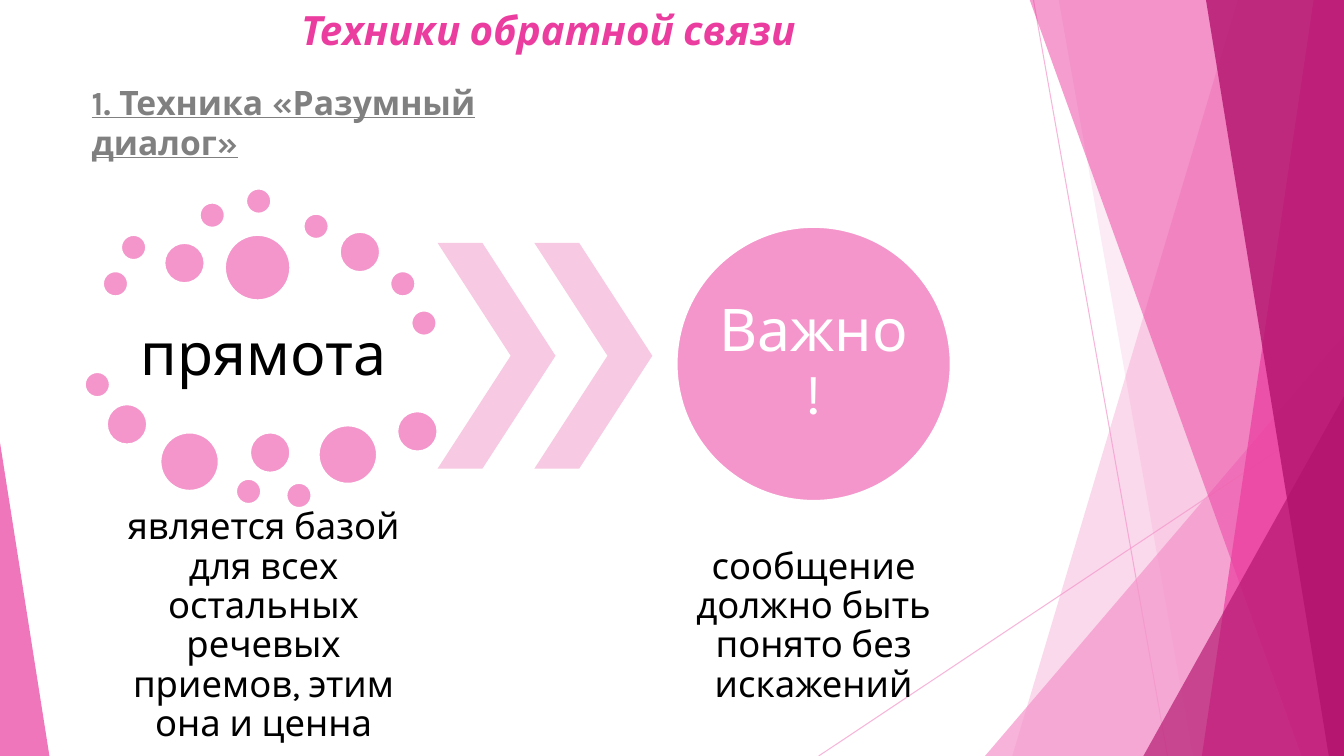
from dataclasses import dataclass, field
from typing import Any

from lxml.etree import SubElement
from pptx import Presentation
from pptx.dml.color import RGBColor
from pptx.enum.shapes import MSO_CONNECTOR as Connector, MSO_SHAPE as Preset
from pptx.enum.text import MSO_ANCHOR as Anchor, PP_ALIGN as Align
from pptx.oxml.ns import qn
from pptx.util import Pt

PX = 9144  # EMU in one px, 100 px to the inch
WIDTH, HEIGHT = 1333, 750


@dataclass(frozen=True)
class Theme:
    font: str = "Karla"
    pink: str = "F496CB"
    magenta: str = "EB3D9F"
    plum: str = "B2136D"
    pale: str = "F8C9E2"
    white: str = "FFFFFF"
    black: str = "000000"
    gray: str = "808080"
    title_size: float = 28.8
    heading_size: float = 24
    label_size: float = 42
    note_size: float = 26
    outline: float = 1.5
    hairline: float = 0.75


THEME = Theme()


@dataclass(frozen=True)
class Box:
    left: int
    top: int
    width: int
    height: int

    def emu(self) -> tuple[int, ...]:
        return tuple(n * PX for n in (self.left, self.top, self.width, self.height))


@dataclass(frozen=True)
class Blade:
    """A band from a slanted left edge to the right side of the page."""
    top_left: int
    bottom_left: int
    color: str
    opacity: int


@dataclass(frozen=True)
class Corner:
    """A right triangle whose peak is at the given share of its width."""
    box: Box
    peak: int
    color: str
    opacity: int


@dataclass(frozen=True)
class Ray:
    start: tuple[int, int]
    end: tuple[int, int]


@dataclass(frozen=True)
class Dot:
    left: int
    top: int
    size: int


@dataclass(frozen=True)
class Label:
    text: str
    size: float
    color: str
    inset: int = 0
    align: Any = Align.CENTER
    anchor: Any = Anchor.MIDDLE
    spacing: float = 0.9
    style: dict[str, bool] = field(default_factory=dict)


RAYS = [Ray((1025, 0), (1158, 750)), Ray((1333, 403), (812, 750))]
FACETS = [
    Blade(1228, 1004, THEME.pink, 36),
    Blade(1050, 1183, THEME.pink, 20),
    Corner(Box(977, 333, 356, 417), 1, THEME.pink, 72),
    Blade(1021, 1291, THEME.magenta, 50),
    Blade(1303, 1192, THEME.magenta, 70),
    Blade(1196, 1318, THEME.plum, 80),
    Corner(Box(1134, 393, 199, 357), 1, THEME.plum, 66),
    Corner(Box(0, 439, 49, 311), 0, THEME.magenta, 70),
]
SMALL, MEDIUM, LARGE, LARGEST = 25, 40, 58, 65
DOTS = [
    # Arc above the word
    Dot(102, 269, SMALL), Dot(120, 233, SMALL), Dot(163, 241, MEDIUM),
    Dot(198, 201, SMALL), Dot(244, 187, SMALL), Dot(301, 212, SMALL),
    Dot(337, 230, MEDIUM), Dot(387, 269, SMALL), Dot(408, 308, SMALL),
    Dot(223, 233, LARGEST),
    # Arc below the word
    Dot(84, 369, SMALL), Dot(106, 401, MEDIUM), Dot(159, 429, LARGE),
    Dot(234, 475, SMALL), Dot(248, 429, MEDIUM), Dot(284, 479, SMALL),
    Dot(316, 422, LARGE), Dot(394, 408, MEDIUM),
]
CHEVRONS = [Box(434 + 96 * step, 241, 117, 224) for step in range(2)]
TEXTS = [
    (Box(81, 75, 535, 50),
     Label("1. Техника «Разумный диалог»", THEME.heading_size, THEME.gray, 10,
           Align.LEFT, Anchor.TOP, 1, {"bold": True, "underline": True})),
    (Box(102, 301, 319, 105), Label("прямота", THEME.label_size, THEME.black, 6)),
    (Box(102, 523, 319, 197),
     Label("является базой для всех остальных речевых приемов, этим она и ценна",
           THEME.note_size, THEME.black, 4)),
    (Box(647, 523, 320, 197),
     Label("сообщение должно быть понято без искажений",
           THEME.note_size, THEME.black, 4)),
]


def set_alpha(fill_parent: Any, opacity: int) -> None:
    color = fill_parent.find(qn("a:solidFill"))[0]
    SubElement(color, qn("a:alpha"), val=str(opacity * 1000))


def paint(shape: Any, color: str, opacity: int = 100, outlined: bool = False) -> None:
    shape.shadow.inherit = False
    shape.fill.solid()
    shape.fill.fore_color.rgb = RGBColor.from_string(color)
    if opacity < 100:
        set_alpha(shape.element.spPr, opacity)
    if outlined:
        shape.line.color.rgb = RGBColor.from_string(THEME.white)
        shape.line.width = Pt(THEME.outline)
    else:
        shape.line.fill.background()


def write(shape: Any, label: Label) -> None:
    frame = shape.text_frame
    frame.text = label.text
    inset = label.inset * PX
    frame_format = {"word_wrap": True, "vertical_anchor": label.anchor,
                    "margin_left": inset, "margin_right": inset,
                    "margin_top": min(inset, 6 * PX), "margin_bottom": min(inset, 6 * PX)}
    para = frame.paragraphs[0]
    para_format = {"alignment": label.align, "line_spacing": label.spacing}
    font = para.runs[0].font
    font_format = {"name": THEME.font, "size": Pt(label.size), **label.style}
    for target, values in ((frame, frame_format), (para, para_format), (font, font_format)):
        for name, value in values.items():
            setattr(target, name, value)
    font.color.rgb = RGBColor.from_string(label.color)


def draw_ray(page: Any, ray: Ray) -> None:
    ends = [n * PX for n in (*ray.start, *ray.end)]
    line = page.shapes.add_connector(Connector.STRAIGHT, *ends)
    line.line.color.rgb = RGBColor.from_string(THEME.pink)
    line.line.width = Pt(THEME.hairline)
    properties = line.element.spPr
    set_alpha(properties.find(qn("a:ln")), 70)
    SubElement(properties, qn("a:effectLst"))


def draw_facet(page: Any, facet: Blade | Corner) -> None:
    if isinstance(facet, Blade):
        builder = page.shapes.build_freeform(facet.top_left, -1, scale=PX)
        builder.add_line_segments(
            [(WIDTH, -1), (WIDTH, HEIGHT), (facet.bottom_left, HEIGHT)], close=True)
        shape = builder.convert_to_shape()
    else:
        shape = page.shapes.add_shape(Preset.ISOSCELES_TRIANGLE, *facet.box.emu())
        shape.adjustments[0] = facet.peak
    paint(shape, facet.color, facet.opacity)


def draw_dot(page: Any, dot: Dot) -> Any:
    box = Box(dot.left, dot.top, dot.size, dot.size)
    shape = page.shapes.add_shape(Preset.OVAL, *box.emu())
    paint(shape, THEME.pink, outlined=True)
    return shape


def main() -> None:
    deck = Presentation()
    deck.slide_width, deck.slide_height = WIDTH * PX, HEIGHT * PX
    page = deck.slides.add_slide(deck.slide_layouts[5])

    # Faceted backdrop
    for ray in RAYS:
        draw_ray(page, ray)
    for facet in FACETS:
        draw_facet(page, facet)

    # Title
    title = page.shapes.title
    title.left, title.top, title.width, title.height = Box(74, 0, 940, 59).emu()
    write(title, Label("Техники обратной связи", THEME.title_size, THEME.magenta, 10,
                       spacing=1, style={"bold": True, "italic": True}))

    # Ring of dots, chevrons and the result circle
    for dot in DOTS:
        draw_dot(page, dot)
    for box in CHEVRONS:
        chevron = page.shapes.add_shape(Preset.CHEVRON, *box.emu())
        chevron.adjustments[0] = 0.62
        paint(chevron, THEME.pale)
    circle = draw_dot(page, Dot(671, 225, 272))
    write(circle, Label("Важно!", THEME.label_size, THEME.white))

    # Heading and captions
    for box, label in TEXTS:
        write(page.shapes.add_textbox(*box.emu()), label)

    deck.save("out.pptx")


if __name__ == "__main__":
    main()
